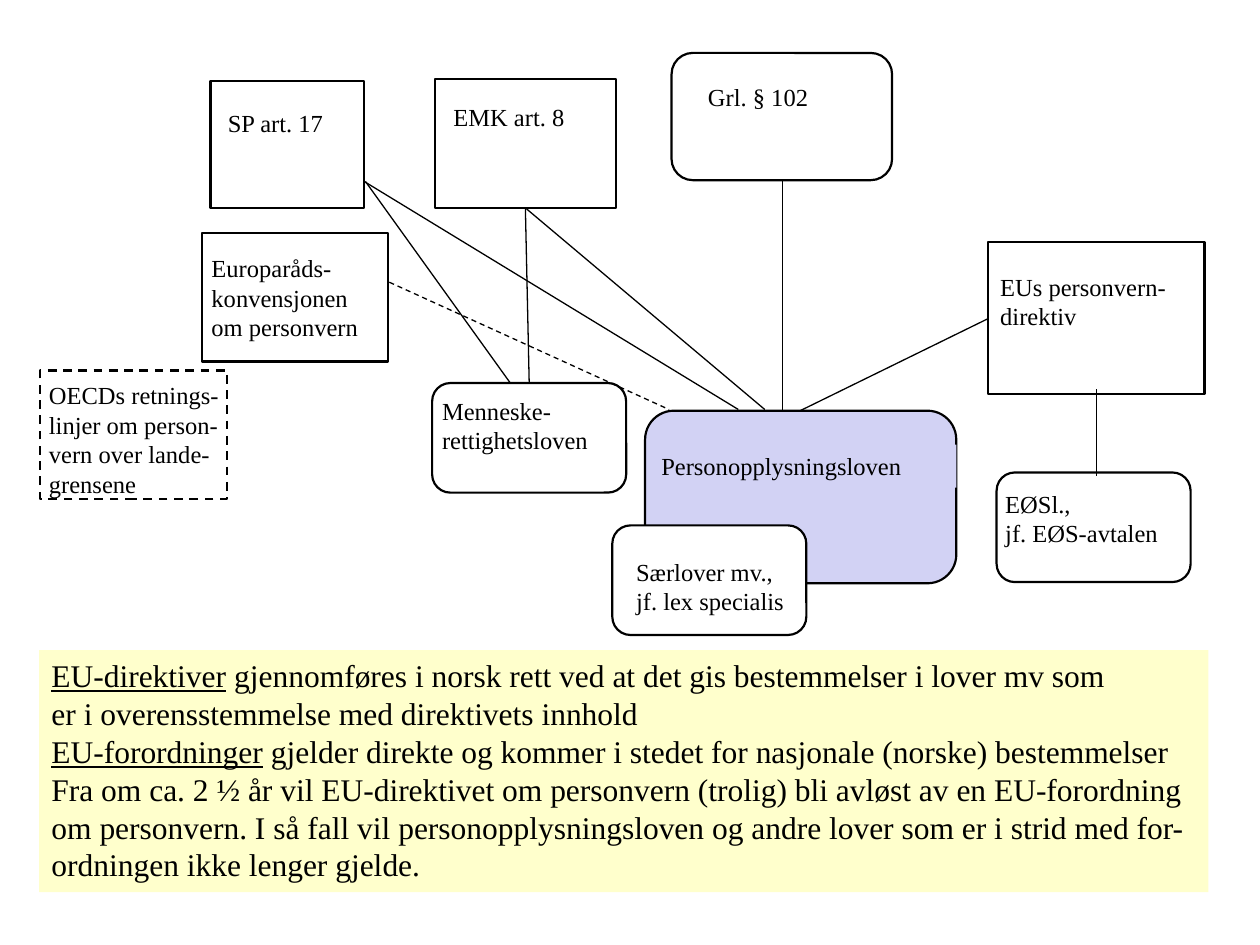
"""Build a slide mapping the legal sources behind the Norwegian personal data act."""
from lxml.etree import SubElement
from pptx import Presentation
from pptx.dml.color import RGBColor
from pptx.enum.dml import MSO_LINE_DASH_STYLE as DASH
from pptx.enum.shapes import MSO_CONNECTOR as CONN, MSO_SHAPE as SHAPE
from pptx.enum.text import MSO_ANCHOR, MSO_AUTO_SIZE, PP_ALIGN
from pptx.oxml.ns import qn
from pptx.util import Inches, Pt

BLACK = RGBColor(0x00, 0x00, 0x00)
WHITE = RGBColor(0xFF, 0xFF, 0xFF)
LILAC = RGBColor(0xD2, 0xD2, 0xF4)
YELLOW = RGBColor(0xFF, 0xFF, 0xCC)
FONT = "Times New Roman"
RECT, ROUND = SHAPE.RECTANGLE, SHAPE.ROUNDED_RECTANGLE

SOURCES = [
    dict(kind=RECT, box=(7.84, 1.92, 1.72, 1.21), label=(7.84, 2.11, 1.76, 0.57),
         text=["EUs personvern-", "direktiv"], wrap=True),
    dict(kind=ROUND, box=(7.91, 3.75, 1.54, 0.87), label=(7.88, 3.83, 1.64, 0.57),
         text=["EØSl.,", "jf. EØS-avtalen"]),
    dict(kind=ROUND, box=(5.12, 3.26, 2.47, 1.37), label=(5.15, 3.53, 2.44, 0.34),
         text=["Personopplysningsloven"], fill=LILAC, label_fill=LILAC),
    dict(kind=ROUND, box=(3.43, 3.04, 1.54, 0.87), label=(3.41, 3.09, 1.58, 0.57),
         text=["Menneske-\vrettighetsloven"]),
    dict(kind=ROUND, box=(4.86, 4.17, 1.54, 0.87), label=(4.95, 4.37, 1.39, 0.57),
         text=["Særlover mv.,", "jf. lex specialis"], fill=WHITE),
    dict(kind=ROUND, box=(5.33, 0.42, 1.75, 1.01), label=(5.52, 0.6, 1.15, 0.34),
         text=["Grl. § 102"]),
    dict(kind=RECT, box=(3.45, 0.63, 1.44, 1.02), label=(3.5, 0.76, 1.26, 0.57),
         text=["EMK art. 8"], wrap=True),
    dict(kind=RECT, box=(1.6, 1.85, 1.48, 1.02), label=(1.58, 1.96, 1.58, 1.04),
         text=["Europaråds-", "konvensjonen\vom personvern"], wrap=True),
    dict(kind=RECT, box=(1.67, 0.64, 1.22, 1.01), label=(1.71, 0.81, 1.03, 0.57),
         text=["SP art. 17"], wrap=True),
    dict(kind=RECT, box=(0.32, 2.94, 1.48, 1.02), label=(0.29, 2.97, 1.56, 1.04),
         text=["OECDs retnings-", "linjer om person-", "vern over lande-", "grensene"],
         dash=DASH.DASH),
]

LINKS = [
    ((6.21, 1.44), (6.21, 3.26), None),
    ((7.84, 2.53), (6.35, 3.26), None),
    ((8.7, 3.09), (8.7, 3.78), None),
    ((4.2, 3.04), (4.17, 1.65), None),
    ((4.05, 3.04), (2.9, 1.44), None),
    ((2.89, 1.44), (5.86, 3.25), None),
    ((4.17, 1.65), (6.07, 3.25), None),
    ((3.09, 2.24), (5.31, 3.25), DASH.DASH),
]

NOTE_BOX = (0.31, 5.16, 9.28, 1.92)
NOTE_TERMS = ("EU-direktiver", "EU-forordninger")
NOTE = [
    "EU-direktiver gjennomføres i norsk rett ved at det gis bestemmelser i lover mv som",
    "er i overensstemmelse med direktivets innhold",
    "EU-forordninger gjelder direkte og kommer i stedet for nasjonale (norske) bestemmelser",
    "Fra om ca. 2 ½ år vil EU-direktivet om personvern (trolig) bli avløst av en EU-forordning",
    "om personvern. I så fall vil personopplysningsloven og andre lover som er i strid med for-",
    "ordningen ikke lenger gjelde.",
]


def style_line(line, width, dash=None):
    line.color.rgb = BLACK
    line.width = Pt(width)
    if dash:
        line.dash_style = dash


def add_box(slide, kind, box, fill=None, border=True, dash=None):
    sp = slide.shapes.add_shape(kind, *map(Inches, box))
    sp.shadow.inherit = False
    if fill is None:
        sp.fill.background()
    else:
        sp.fill.solid()
        sp.fill.fore_color.rgb = fill
    if border:
        style_line(sp.line, 1.25, dash)
    else:
        sp.line.fill.background()
    return sp


def write(sp, lines, size=14, wrap=False, terms=()):
    tf = sp.text_frame
    tf.word_wrap = wrap
    tf.auto_size = MSO_AUTO_SIZE.SHAPE_TO_FIT_TEXT
    tf.vertical_anchor = MSO_ANCHOR.TOP
    for i, text in enumerate(lines):
        p = tf.paragraphs[0] if i == 0 else tf.add_paragraph()
        p.alignment = PP_ALIGN.LEFT
        term = next((t for t in terms if text.startswith(t)), "")
        p.text = term or text
        if term:
            p.runs[0].font.underline = True
            p.add_run().text = text[len(term):]
        for r in p.runs:
            r.font.name, r.font.size = FONT, Pt(size)
            r.font.color.rgb = BLACK


def add_source(slide, kind, box, label, text, wrap=False, fill=None, label_fill=None, dash=None):
    add_box(slide, kind, box, fill, dash=dash)
    if label_fill is None:
        sp = slide.shapes.add_textbox(*map(Inches, label))
    else:
        sp = add_box(slide, RECT, label, label_fill, border=False)
    write(sp, text, wrap=wrap)


def add_link(slide, start, end, dash):
    line = slide.shapes.add_connector(CONN.STRAIGHT, *map(Inches, start + end))
    style_line(line.line, 0.75, dash)
    SubElement(line._element.spPr, qn("a:effectLst"))


def main():
    prs = Presentation()
    prs.slide_width, prs.slide_height = Inches(10), Inches(7.5)
    slide = prs.slides.add_slide(prs.slide_layouts[6])
    for source in SOURCES:
        add_source(slide, **source)
    for link in LINKS:
        add_link(slide, *link)
    note = add_box(slide, RECT, NOTE_BOX, YELLOW, border=False)
    write(note, NOTE, size=18, terms=NOTE_TERMS)
    prs.save("out.pptx")


if __name__ == "__main__":
    main()
